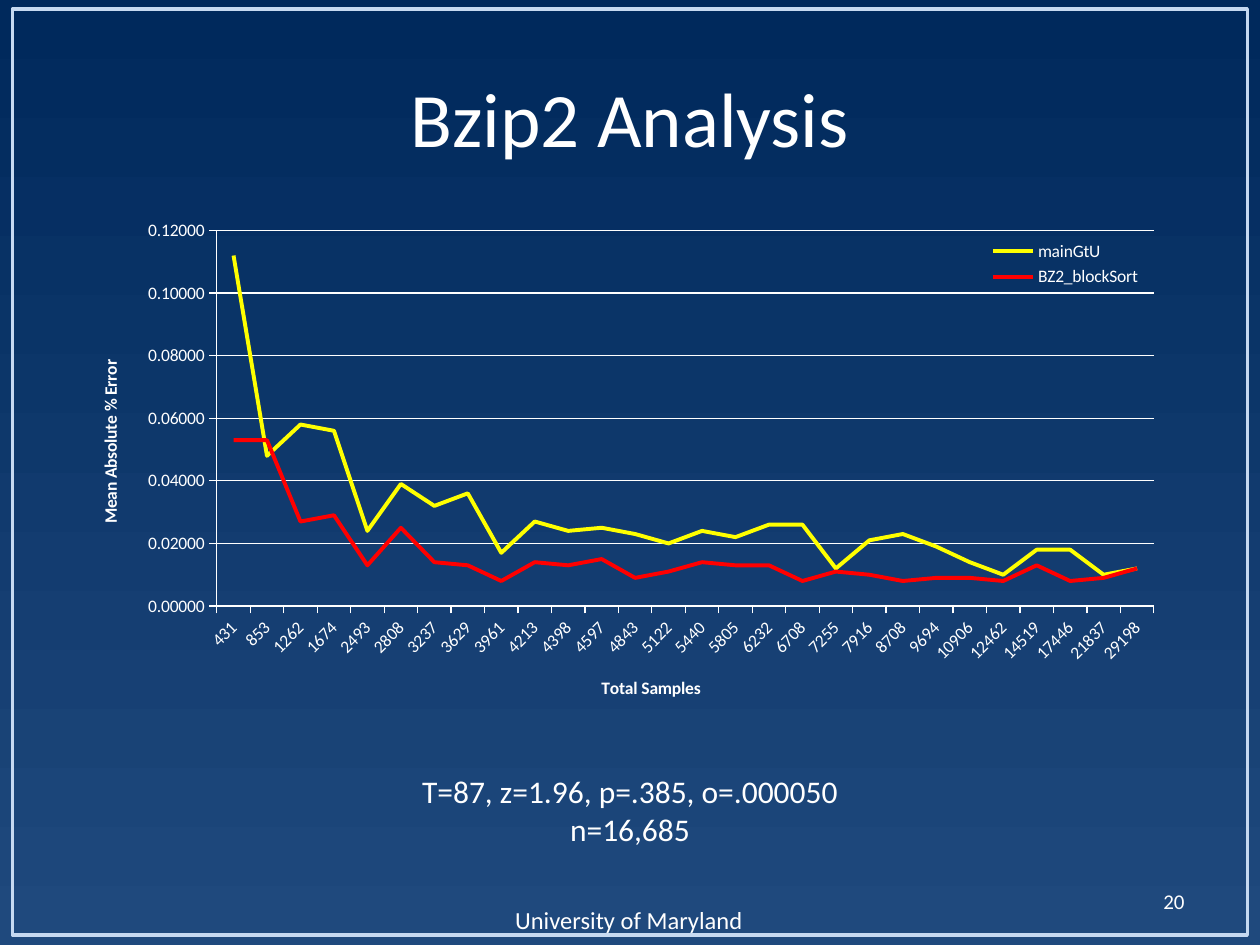
"""Build the Bzip2 Analysis slide with its error line chart."""
from lxml import etree
from pptx import Presentation
from pptx.chart.data import CategoryChartData
from pptx.dml.color import RGBColor
from pptx.enum.chart import XL_CHART_TYPE, XL_LEGEND_POSITION, XL_MARKER_STYLE, XL_TICK_MARK
from pptx.enum.shapes import MSO_SHAPE
from pptx.enum.text import MSO_ANCHOR, PP_ALIGN
from pptx.oxml.ns import qn
from pptx.util import Pt

WHITE = RGBColor(0xFF, 0xFF, 0xFF)
BLUE = RGBColor(0x1F, 0x49, 0x7D)
NAVY = RGBColor(0x00, 0x29, 0x5C)
PALE_BLUE = RGBColor(0xC6, 0xD9, 0xF1)
YELLOW = RGBColor(0xFF, 0xFF, 0x00)
RED = RGBColor(0xFF, 0x00, 0x00)
FONT = "Calibri"
LINE = XL_CHART_TYPE.LINE
RIGHT_LEGEND = XL_LEGEND_POSITION.RIGHT
NO_MARKER = XL_MARKER_STYLE.NONE
OUTSIDE = XL_TICK_MARK.OUTSIDE
RECTANGLE = MSO_SHAPE.RECTANGLE
TOP, MIDDLE = MSO_ANCHOR.TOP, MSO_ANCHOR.MIDDLE
LEFT, CENTER, RIGHT = PP_ALIGN.LEFT, PP_ALIGN.CENTER, PP_ALIGN.RIGHT

SAMPLES = [
    431, 853, 1262, 1674, 2493, 2808, 3237, 3629, 3961, 4213, 4398, 4597, 4843, 5122,
    5440, 5805, 6232, 6708, 7255, 7916, 8708, 9694, 10906, 12462, 14519, 17446, 21837, 29198,
]
ERRORS = [
    ("mainGtU", YELLOW, [
        0.112, 0.048, 0.058, 0.056, 0.024, 0.039, 0.032, 0.036, 0.017, 0.027,
        0.024, 0.025, 0.023, 0.02, 0.024, 0.022, 0.026, 0.026, 0.012, 0.021,
        0.023, 0.019, 0.014, 0.01, 0.018, 0.018, 0.01, 0.012]),
    ("BZ2_blockSort", RED, [
        0.053, 0.053, 0.027, 0.029, 0.013, 0.025, 0.014, 0.013, 0.008, 0.014,
        0.013, 0.015, 0.009, 0.011, 0.014, 0.013, 0.013, 0.008, 0.011, 0.01,
        0.008, 0.009, 0.009, 0.008, 0.013, 0.008, 0.009, 0.012]),
]


def add_text(page, bounds, lines, size, align, anchor=TOP, wrap=True):
    box = page.shapes.add_textbox(*map(Pt, bounds))
    frame = box.text_frame
    frame.word_wrap = wrap
    frame.vertical_anchor = anchor
    frame.text = lines
    for para in frame.paragraphs:
        para.alignment = align
        for span in para.runs:
            span.font.size = Pt(size)
            span.font.name = FONT
            span.font.color.rgb = WHITE


def set_layout(parent, index, settings):
    for old in parent.findall(qn("c:layout")):
        parent.remove(old)
    layout = etree.Element(qn("c:layout"))
    manual = etree.SubElement(layout, qn("c:manualLayout"))
    for name, value in settings:
        etree.SubElement(manual, qn("c:" + name)).set("val", str(value))
    parent.insert(index, layout)


deck = Presentation()
deck.slide_width, deck.slide_height = Pt(720), Pt(540)
page = deck.slides.add_slide(deck.slide_layouts[6])
background = page.background.fill
background.gradient()
background.gradient_angle = 90
for stop, color in zip(background.gradient_stops, (BLUE, NAVY)):
    stop.color.rgb = color

border = page.shapes.add_shape(RECTANGLE, Pt(7.2), Pt(5.2), Pt(705.6), Pt(529.2))
border.shadow.inherit = False
border.fill.background()
border.line.color.rgb = PALE_BLUE
border.line.width = Pt(2)

add_text(page, (287.3, 513.4, 146.2, 24.5), "University of Maryland", 14, LEFT, wrap=False)
add_text(page, (36, 21.6, 648, 90), "Bzip2 Analysis", 44, CENTER, MIDDLE)
add_text(page, (516, 500.5, 168, 28.8), "20", 12, RIGHT, MIDDLE)

data = CategoryChartData(number_format="0.00000")
data.categories = [str(count) for count in SAMPLES]
for name, color, values in ERRORS:
    data.add_series(name, values)
chart = page.shapes.add_chart(LINE, Pt(42), Pt(120), Pt(630), Pt(294), data).chart
chart.has_title = False
chart.font.size = Pt(10)
chart.font.name = FONT
chart.font.color.rgb = WHITE
plot = chart.plots[0]
plot.vary_by_categories = False
for series, (name, color, values) in zip(plot.series, ERRORS):
    series.smooth = False
    series.marker.style = NO_MARKER
    series.format.line.color.rgb = color
    series.format.line.width = Pt(2.25)

sample_axis, error_axis = chart.category_axis, chart.value_axis
for axis, title, turn in (
    (sample_axis, "Total Samples", 0),
    (error_axis, "Mean Absolute % Error", -90),
):
    axis.major_tick_mark = OUTSIDE
    axis.format.line.color.rgb = WHITE
    axis.format.line.width = Pt(0.75)
    frame = axis.axis_title.text_frame
    frame.text = title
    font = frame.paragraphs[0].runs[0].font
    font.size, font.bold, font.name = Pt(10), True, FONT
    font.color.rgb = WHITE
    body = axis.axis_title._element.find(".//" + qn("a:bodyPr"))
    body.set("rot", str(turn * 60000))
    body.set("vert", "horz")

sample_axis.tick_labels.font.size = Pt(10)
sample_axis.tick_labels.font.color.rgb = WHITE
sample_axis._element.find(qn("c:txPr")).find(qn("a:bodyPr")).set("rot", str(-45 * 60000))
error_axis.minimum_scale, error_axis.maximum_scale, error_axis.major_unit = 0, 0.12, 0.02
error_axis.tick_labels.number_format = "0.00000"
error_axis.tick_labels.number_format_is_linked = False
error_axis.has_major_gridlines = True
error_axis.major_gridlines.format.line.color.rgb = WHITE
error_axis.major_gridlines.format.line.width = Pt(0.75)

chart.has_legend = True
chart.legend.position = RIGHT_LEGEND
chart.legend.include_in_layout = True
edges = [("xMode", "edge"), ("yMode", "edge")]
set_layout(chart.legend._element, 1,
           edges + [("x", 0.82), ("y", 0.05), ("w", 0.16), ("h", 0.11)])
set_layout(chart._chartSpace.find(".//" + qn("c:plotArea")), 0,
           [("layoutTarget", "inner")] + edges
           + [("x", 0.13), ("y", 0.04), ("w", 0.85), ("h", 0.73)])

add_text(page, (232.6, 437.8, 254.9, 51.1),
         "T=87, z=1.96, p=.385, o=.000050\nn=16,685", 18, CENTER, wrap=False)

deck.save("out.pptx")
